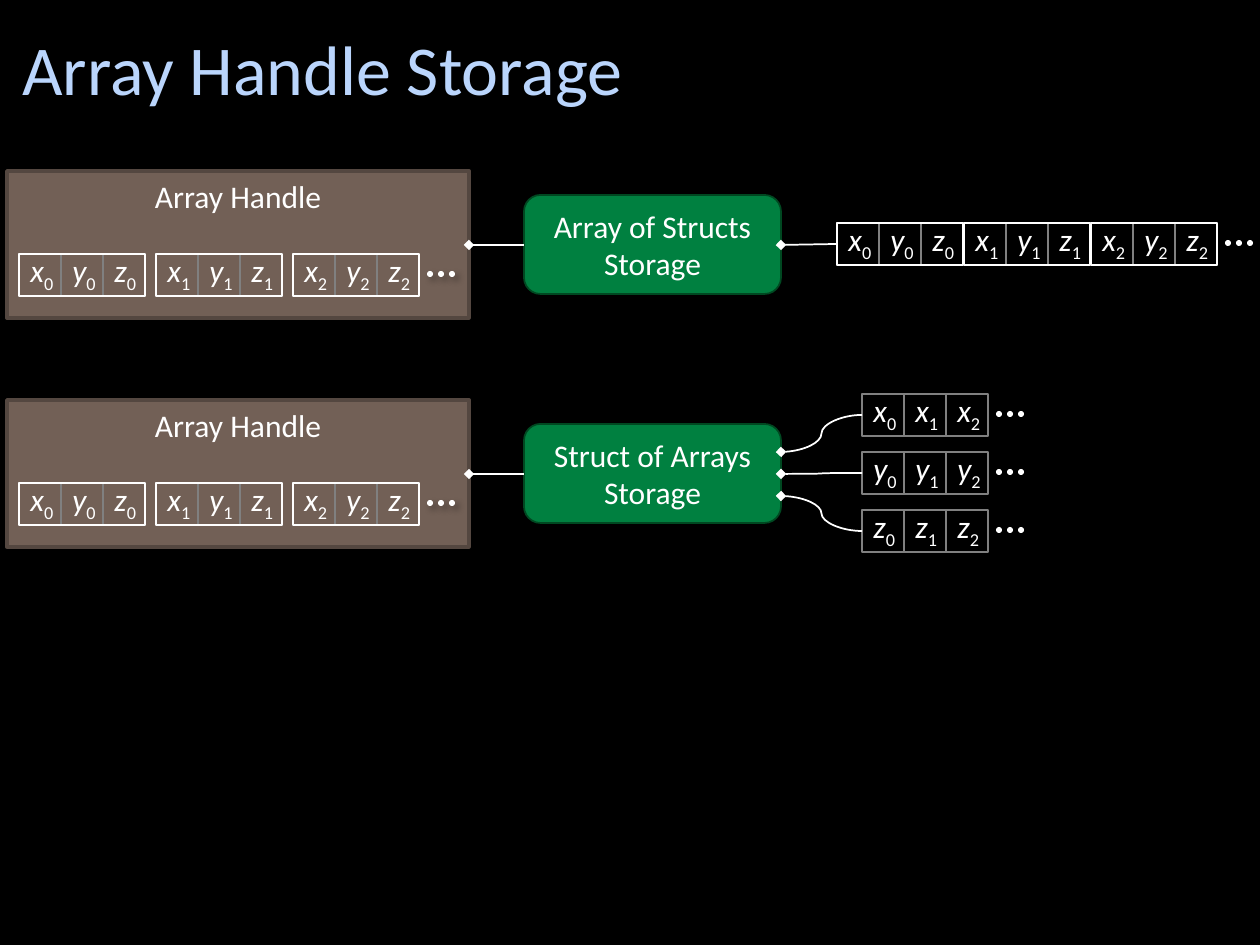
"""Build the slide "Array Handle Storage", comparing two storage layouts."""
import pptx
import pptx.dml.color
import pptx.enum.shapes
import pptx.enum.text
import pptx.oxml
import pptx.oxml.ns
import pptx.util

SCALE = 914400 / 126
BLACK = pptx.dml.color.RGBColor(0x00, 0x00, 0x00)
WHITE = pptx.dml.color.RGBColor(0xFF, 0xFF, 0xFF)
GRAY = pptx.dml.color.RGBColor(0x80, 0x80, 0x80)
PALE_BLUE = pptx.dml.color.RGBColor(0xBA, 0xD5, 0xFC)
BROWN = pptx.dml.color.RGBColor(0x72, 0x60, 0x56)
DARK_BROWN = pptx.dml.color.RGBColor(0x54, 0x47, 0x40)
GREEN = pptx.dml.color.RGBColor(0x00, 0x80, 0x40)
DARK_GREEN = pptx.dml.color.RGBColor(0x00, 0x48, 0x21)
SHAPE = pptx.enum.shapes.MSO_SHAPE
CONNECTOR = pptx.enum.shapes.MSO_CONNECTOR
ALIGN = pptx.enum.text.PP_ALIGN
ANCHOR = pptx.enum.text.MSO_ANCHOR
NAMESPACE = pptx.oxml.ns.nsdecls("a")
DOT_SHADOW = (
    f'<a:effectLst {NAMESPACE}><a:outerShdw blurRad="50800" dist="38100" dir="2700000">'
    '<a:srgbClr val="000000"><a:alpha val="40000"/></a:srgbClr></a:outerShdw></a:effectLst>'
)

CELL = 42
GROUP = 3 * CELL
DOT = 6
DOT_PITCH = 11
ROW_PITCH = 229

deck = pptx.Presentation()
deck.slide_width = round(1260 * SCALE)
deck.slide_height = round(945 * SCALE)
slide = deck.slides.add_slide(deck.slide_layouts[6])
slide.background.fill.solid()
slide.background.fill.fore_color.rgb = BLACK


def draw(kind, box, *, fill=None, outline=None, weight=1):
    shape = slide.shapes.add_shape(kind, *[round(length * SCALE) for length in box])
    shape.shadow.inherit = False
    if fill is None:
        shape.fill.background()
    else:
        shape.fill.solid()
        shape.fill.fore_color.rgb = fill
    if outline is None:
        shape.line.fill.background()
    else:
        shape.line.color.rgb = outline
        shape.line.width = pptx.util.Pt(weight)
    return shape


def write(text, *, box=None, shape=None, subscript="", size=18, color=WHITE,
          italic=False, align=ALIGN.LEFT, anchor=ANCHOR.TOP, wrap=True):
    if shape is None:
        shape = slide.shapes.add_textbox(*[round(length * SCALE) for length in box])
    frame = shape.text_frame
    frame.word_wrap = wrap
    frame.vertical_anchor = anchor
    paragraph = frame.paragraphs[0]
    paragraph.alignment = align
    for part in filter(None, (text, subscript)):
        run = paragraph.add_run()
        run.text = part
        run.font.name = "Calibri"
        run.font.size = pptx.util.Pt(size)
        run.font.color.rgb = color
        run.font.italic = italic and part is text
    if subscript:
        run.font._element.set("baseline", "-25000")


write("Array Handle Storage", box=(10, 0, 1113, 136), size=40, color=PALE_BLUE,
      anchor=ANCHOR.MIDDLE)

for row, storage in enumerate(("Array of Structs Storage", "Struct of Arrays Storage")):
    top = 171 + row * ROW_PITCH
    handle = draw(SHAPE.RECTANGLE, (7, top, 462, 147), fill=BROWN, outline=DARK_BROWN, weight=2)
    write("Array Handle", shape=handle, align=ALIGN.CENTER)
    storage_box = draw(SHAPE.ROUNDED_RECTANGLE, (524, top + 24, 257, 99),
                       fill=GREEN, outline=DARK_GREEN)
    write(storage, shape=storage_box, align=ALIGN.CENTER, anchor=ANCHOR.MIDDLE)

structs = ("x0 y0 z0", "x1 y1 z1", "x2 y2 z2")
arrays = [
    (19, 254, 137, structs, True),
    (19, 254 + ROW_PITCH, 137, structs, True),
    (837, 223, 127, structs, True),
]
for index, component in enumerate("xyz"):
    group = " ".join(f"{component}{item}" for item in range(3))
    arrays.append((862, 394 + 58 * index, GROUP, (group,), False))

for left, top, group_pitch, groups, framed in arrays:
    for index, group in enumerate(groups):
        group_left = left + index * group_pitch
        for column, (component, item) in enumerate(group.split()):
            cell_left = group_left + column * CELL
            write(component, box=(cell_left - 1, top - 9, 53, 50), subscript=item,
                  italic=True, wrap=False)
            draw(SHAPE.RECTANGLE, (cell_left, top, CELL, CELL), outline=GRAY, weight=0.75)
        if framed:
            draw(SHAPE.RECTANGLE, (group_left, top, GROUP, CELL), outline=WHITE)
    for index in range(3):
        dot_left = group_left + GROUP + 8 + index * DOT_PITCH
        dot = draw(SHAPE.OVAL, (dot_left, top + 17, DOT, DOT), fill=WHITE)
        properties = dot._element.spPr
        properties.remove(properties.find(pptx.oxml.ns.qn("a:effectLst")))
        properties.append(pptx.oxml.parse_xml(DOT_SHADOW))

links = (
    (CONNECTOR.STRAIGHT, 469, 245, 524, 245),
    (CONNECTOR.STRAIGHT, 781, 245, 837, 244),
    (CONNECTOR.STRAIGHT, 469, 474, 524, 474),
    (CONNECTOR.CURVE, 781, 452, 862, 415),
    (CONNECTOR.CURVE, 781, 474, 862, 473),
    (CONNECTOR.CURVE, 781, 496, 862, 531),
)
for kind, *ends in links:
    link = slide.shapes.add_connector(kind, *[round(length * SCALE) for length in ends])
    link.line.color.rgb = WHITE
    link.line.width = pptx.util.Pt(1)
    link.line._get_or_add_ln().append(
        pptx.oxml.parse_xml(f'<a:headEnd {NAMESPACE} type="diamond"/>'))
    link._element.spPr.append(pptx.oxml.parse_xml(f"<a:effectLst {NAMESPACE}/>"))

deck.save("out.pptx")
